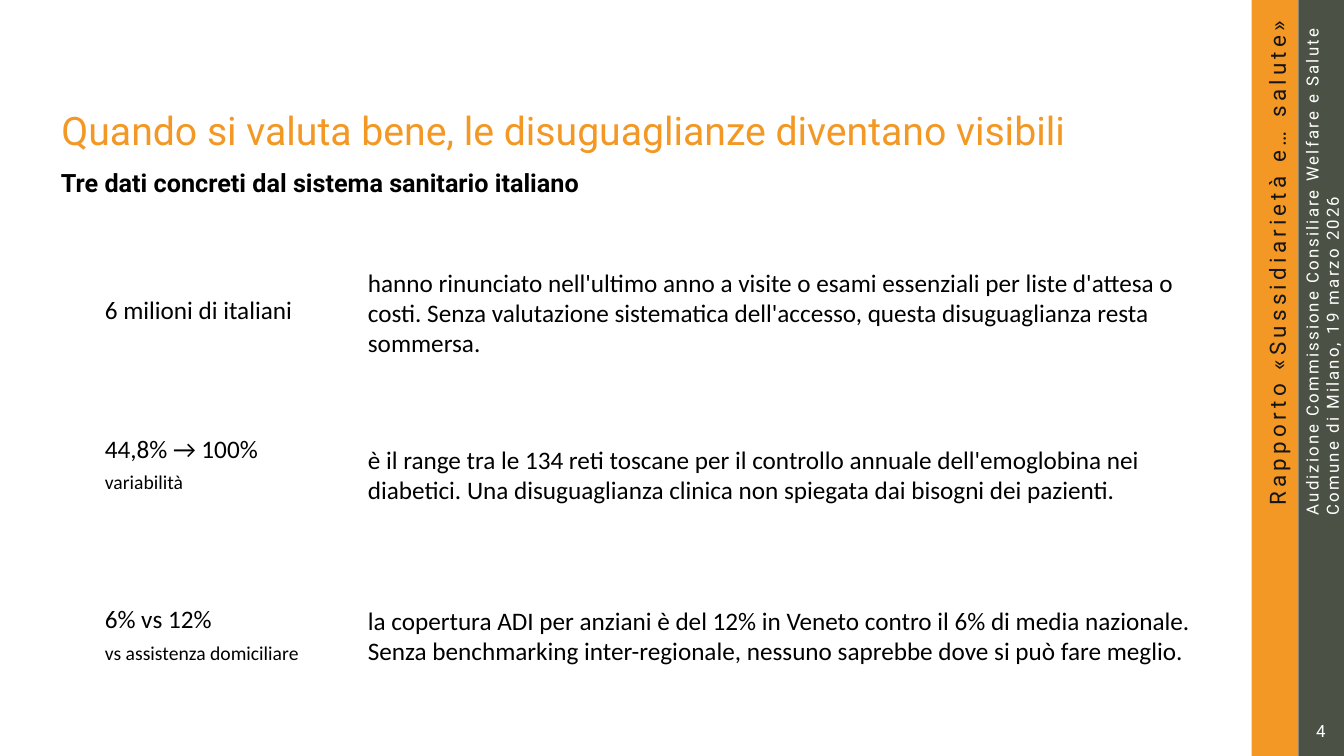
from dataclasses import dataclass

import pptx
import pptx.dml.color
import pptx.enum.shapes
import pptx.enum.text
import pptx.shapes.autoshape
import pptx.slide
import pptx.util

Pt = pptx.util.Pt
Align = pptx.enum.text.PP_ALIGN
Fit = pptx.enum.text.MSO_AUTO_SIZE


@dataclass(frozen=True)
class Theme:
    orange: str = "F39824"
    olive: str = "4C5145"
    white: str = "FFFFFF"
    black: str = "000000"
    ink: str = "151515"
    head: str = "Roboto"
    body: str = "Calibri"
    title: float = 28
    text: float = 18
    side: float = 16
    note: float = 14
    small: float = 12


THEME = Theme()


@dataclass(frozen=True)
class Box:
    left: float
    top: float
    width: float
    height: float


@dataclass(frozen=True)
class Style:
    font: str
    size: float
    color: str
    bold: bool = False
    space: float = 0
    align: Align = Align.LEFT


@dataclass(frozen=True)
class Fact:
    label: str
    note: str
    detail: str
    top: float  # top of the label
    start: float  # top of the detail
    height: float  # height of the detail


@dataclass(frozen=True)
class Label:
    text: str
    box: Box
    style: Style
    turn: float = 0
    inset: float = 0
    wrap: bool = True


BODY = Style(THEME.body, THEME.text, THEME.black)
NOTE = Style(THEME.body, THEME.note, THEME.black)
TITLE = Style(THEME.head, THEME.title, THEME.orange)

BANDS = [
    (Box(894, 0, 33.4, 540), THEME.orange),
    (Box(927.4, 0, 32.6, 540), THEME.olive),
]

LABELS = [
    Label("Rapporto «Sussidiarietà e… salute»", Box(676, 242, 472.3, 18.7),
          Style(THEME.head, THEME.side, THEME.ink, space=3, align=Align.RIGHT),
          turn=270),
    Label("Audizione Commissione Consiliare Welfare e Salute\n"
          "Comune di Milano, 19 marzo 2026", Box(730.1, 139.7, 428.4, 28.1),
          Style(THEME.head, THEME.small, THEME.white, space=1.5), turn=270),
    Label("4", Box(935.3, 511.2, 15.1, 20.9),
          Style(THEME.head, THEME.small, THEME.white, align=Align.RIGHT),
          inset=3.6, wrap=False),
    Label("Tre dati concreti dal sistema sanitario italiano",
          Box(43.5, 118.8, 471.6, 22.3),
          Style(THEME.head, THEME.text, THEME.black, bold=True)),
]

FACTS = [
    Fact("6 milioni di italiani", "",
         "hanno rinunciato nell'ultimo anno a visite o esami essenziali per "
         "liste d'attesa o costi. Senza valutazione sistematica dell'accesso, "
         "questa disuguaglianza resta sommersa.", 211.7, 190.8, 64.8),
    Fact("44,8% → 100%", "variabilità",
         "è il range tra le 134 reti toscane per il controllo annuale "
         "dell'emoglobina nei diabetici. Una disuguaglianza clinica non "
         "spiegata dai bisogni dei pazienti.", 311.2, 316.8, 43.9),
    Fact("6% vs 12%", "vs assistenza domiciliare",
         "la copertura ADI per anziani è del 12% in Veneto contro il 6% di "
         "media nazionale. Senza benchmarking inter-regionale, nessuno "
         "saprebbe dove si può fare meglio.", 432.7, 432.7, 41.8),
]


def paint(shape: pptx.shapes.autoshape.Shape, color: str) -> None:
    shape.shadow.inherit = False
    shape.fill.solid()
    shape.fill.fore_color.rgb = pptx.dml.color.RGBColor.from_string(color)
    shape.line.fill.background()


def write(shape: pptx.shapes.autoshape.Shape, text: str, style: Style,
          inset: float = 0, wrap: bool = True,
          fit: Fit = Fit.SHAPE_TO_FIT_TEXT) -> None:
    frame = shape.text_frame
    frame.text = text
    frame.word_wrap = wrap
    frame.auto_size = fit
    frame.vertical_anchor = pptx.enum.text.MSO_ANCHOR.MIDDLE
    frame.margin_left = frame.margin_right = Pt(inset)
    frame.margin_top = frame.margin_bottom = Pt(inset)
    for para in frame.paragraphs:
        para.alignment = style.align
        for run in para.runs:
            font = run.font
            font.name, font.size, font.bold = style.font, Pt(style.size), style.bold
            font.color.rgb = pptx.dml.color.RGBColor.from_string(style.color)
            if style.space:
                run._r.get_or_add_rPr().set("spc", str(round(style.space * 100)))


def place(box: Box) -> tuple[int, int, int, int]:
    return Pt(box.left), Pt(box.top), Pt(box.width), Pt(box.height)


def block(slide: pptx.slide.Slide, box: Box,
          color: str) -> pptx.shapes.autoshape.Shape:
    kind = pptx.enum.shapes.MSO_SHAPE.RECTANGLE
    shape = slide.shapes.add_shape(kind, *place(box))
    paint(shape, color)
    return shape


def label(slide: pptx.slide.Slide, item: Label) -> None:
    shape = slide.shapes.add_textbox(*place(item.box))
    shape.rotation = item.turn
    write(shape, item.text, item.style, item.inset, item.wrap)


def fact(slide: pptx.slide.Slide, item: Fact) -> None:
    parts = [(item.label, Box(74.9, item.top, 211, 18.7), BODY)]
    if item.note:
        parts.append((item.note, Box(74.9, item.top + 25.6, 211, 15.1), NOTE))
    parts.append((item.detail, Box(262.8, item.start, 595.4, item.height), BODY))
    for text, box, style in parts:
        write(block(slide, box, THEME.white), text, style)


def main() -> None:
    deck = pptx.Presentation()
    deck.slide_width, deck.slide_height = Pt(960), Pt(540)
    slide = deck.slides.add_slide(deck.slide_layouts[5])

    # Title
    title = slide.shapes.title
    title.left, title.top, title.width, title.height = place(
        Box(43.9, 25.2, 749.5, 135.4))
    write(title, "Quando si valuta bene, le disuguaglianze diventano visibili",
          TITLE, fit=Fit.NONE)

    # Side bands
    for box, color in BANDS:
        block(slide, box, color)

    # Side texts, page number and subtitle
    for item in LABELS:
        label(slide, item)

    # Three facts
    for item in FACTS:
        fact(slide, item)

    deck.save("out.pptx")


if __name__ == "__main__":
    main()
